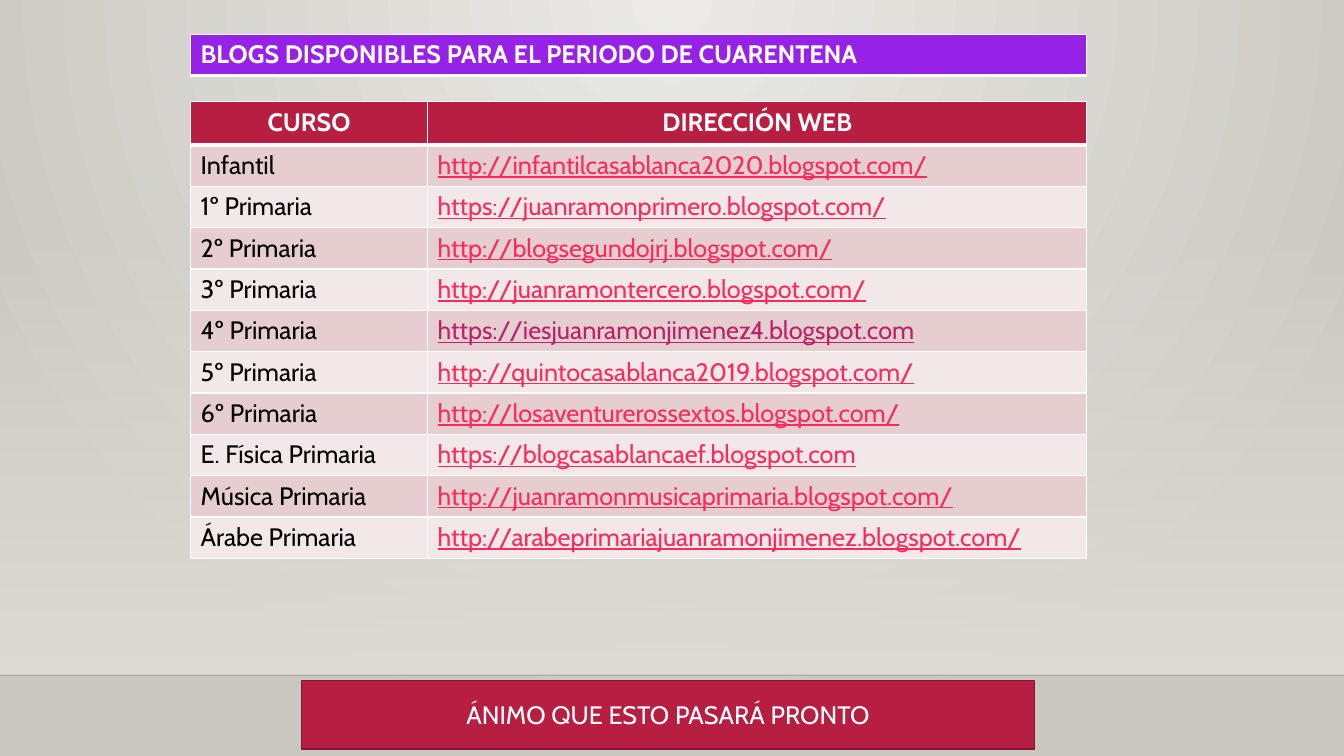
from lxml import etree
from pptx import Presentation
from pptx.dml.color import RGBColor
from pptx.enum.shapes import MSO_CONNECTOR, MSO_SHAPE
from pptx.enum.text import MSO_ANCHOR, PP_ALIGN
from pptx.oxml import parse_xml
from pptx.oxml.ns import qn
from pptx.util import Inches, Pt

RECT = MSO_SHAPE.RECTANGLE
STRAIGHT = MSO_CONNECTOR.STRAIGHT
MIDDLE = MSO_ANCHOR.MIDDLE
LEFT, CENTER = PP_ALIGN.LEFT, PP_ALIGN.CENTER
NS = 'xmlns:a="http://schemas.openxmlformats.org/drawingml/2006/main"'

WHITE, BLACK, RED, PURPLE = "FFFFFF", "000000", "B71E42", "9622E7"
LINK, VISITED = "FA2B5C", "BA2169"
BANDS = ["E6CDCF", "F3E8E9"]
BLOGS = [
    ("Infantil", "http://infantilcasablanca2020.blogspot.com/"),
    ("1º Primaria", "https://juanramonprimero.blogspot.com/"),
    ("2º Primaria", "http://blogsegundojrj.blogspot.com/"),
    ("3º Primaria", "http://juanramontercero.blogspot.com/"),
    ("4º Primaria", "https://iesjuanramonjimenez4.blogspot.com"),
    ("5º Primaria", "http://quintocasablanca2019.blogspot.com/"),
    ("6º Primaria", "http://losaventurerossextos.blogspot.com/"),
    ("E. Física Primaria", "https://blogcasablancaef.blogspot.com"),
    ("Música Primaria", "http://juanramonmusicaprimaria.blogspot.com/"),
    ("Árabe Primaria", "http://arabeprimariajuanramonjimenez.blogspot.com/"),
]


def rgb(code):
    return RGBColor.from_string(code)


def write(frame, text, color, align=LEFT, **look):
    """Put one formatted line of text in a frame."""
    line = frame.paragraphs[0]
    line.alignment = align
    run = line.add_run()
    run.text = text
    run.font.color.rgb = rgb(color)
    for name, value in {"size": Pt(18), "name": "Cabin", **look}.items():
        setattr(run.font, name, value)


deck = Presentation()
deck.slide_width, deck.slide_height = Inches(13.33), Inches(7.5)
slide = deck.slides.add_slide(deck.slide_layouts[6])
shapes = slide.shapes

# Backdrop: radial glow, fading wall and floor line
wall = shapes.add_shape(RECT, 0, Inches(2.21), Inches(13.33), Inches(4.49))
wall.shadow.inherit = False
wall.line.fill.background()
for fill, colors in [(slide.background.fill, ["ECEAE7", "CAC7C1"]),
                     (wall.fill, ["DFDBD5", "DFDBD5"])]:
    fill.gradient()
    for stop, color in zip(fill.gradient_stops, colors):
        stop.color.rgb = rgb(color)
wall.fill.gradient_angle = 270
glow = slide.element.find(".//" + qn("p:bgPr")).find(qn("a:gradFill"))
glow.replace(glow.find(qn("a:lin")), parse_xml(
    f'<a:path {NS} path="circle">'
    '<a:fillToRect l="43000" t="0" r="43000" b="100000"/></a:path>'))

floor = shapes.add_connector(STRAIGHT, 0, Inches(6.7), Inches(13.33), Inches(6.7))
floor.line.color.rgb = rgb("000001")
floor.line.width = Pt(1)
etree.SubElement(floor.element.spPr, qn("a:effectLst"))
for part, alpha in [(wall, "0"), (floor, "20000")]:
    tint = part.element.spPr.find(".//" + qn("a:srgbClr"))
    etree.SubElement(tint, qn("a:alpha")).set("val", alpha)

# Both tables: each cell is text, colour, fill, alignment and look
head = {"bold": True}
rows = [[(text, WHITE, RED, CENTER, head) for text in ("CURSO", "DIRECCIÓN WEB")]]
for i, (course, link) in enumerate(BLOGS):
    band = BANDS[i % 2]
    color = VISITED if course.startswith("4") else LINK
    rows.append([(course, BLACK, band, LEFT, {"bold": False}),
                 (link, color, band, LEFT, {"bold": False, "underline": True})])
title = [[("BLOGS DISPONIBLES PARA EL PERIODO DE CUARENTENA",
           WHITE, PURPLE, LEFT, head)]]

for top, first, widths, cells in [(1.01, 0.43, [2.35, 6.54], rows),
                                  (0.34, 0.41, [8.89], title)]:
    heights = [first] + [0.41] * (len(cells) - 1)
    grid = shapes.add_table(len(cells), len(widths), Inches(1.89), Inches(top),
                            Inches(8.89), Inches(sum(heights))).table
    for col, width in zip(grid.columns, widths):
        col.width = Inches(width)
    for r, row in enumerate(cells):
        grid.rows[r].height = Inches(heights[r])
        for c, (text, color, back, align, look) in enumerate(row):
            cell = grid.cell(r, c)
            edges = cell._tc.get_or_add_tcPr()
            for side in "LRTB":
                thick = (r, side) in [(0, "B"), (1, "T")]
                edges.append(parse_xml(
                    f'<a:ln{side} {NS} w="{Pt(3 if thick else 1)}"><a:solidFill>'
                    f'<a:srgbClr val="{WHITE}"/></a:solidFill></a:ln{side}>'))
            cell.fill.solid()
            cell.fill.fore_color.rgb = rgb(back)
            write(cell.text_frame, text, color, align, **look)

# Closing message
cheer = shapes.add_shape(RECT, Inches(2.99), Inches(6.75), Inches(7.27), Inches(0.68))
cheer.shadow.inherit = False
cheer.fill.solid()
cheer.fill.fore_color.rgb = rgb(RED)
cheer.line.color.rgb = rgb("871631")
cheer.line.width = Pt(1.25)
cheer.text_frame.vertical_anchor = MIDDLE
write(cheer.text_frame, "ÁNIMO QUE ESTO PASARÁ PRONTO", WHITE, CENTER)

deck.save("out.pptx")
